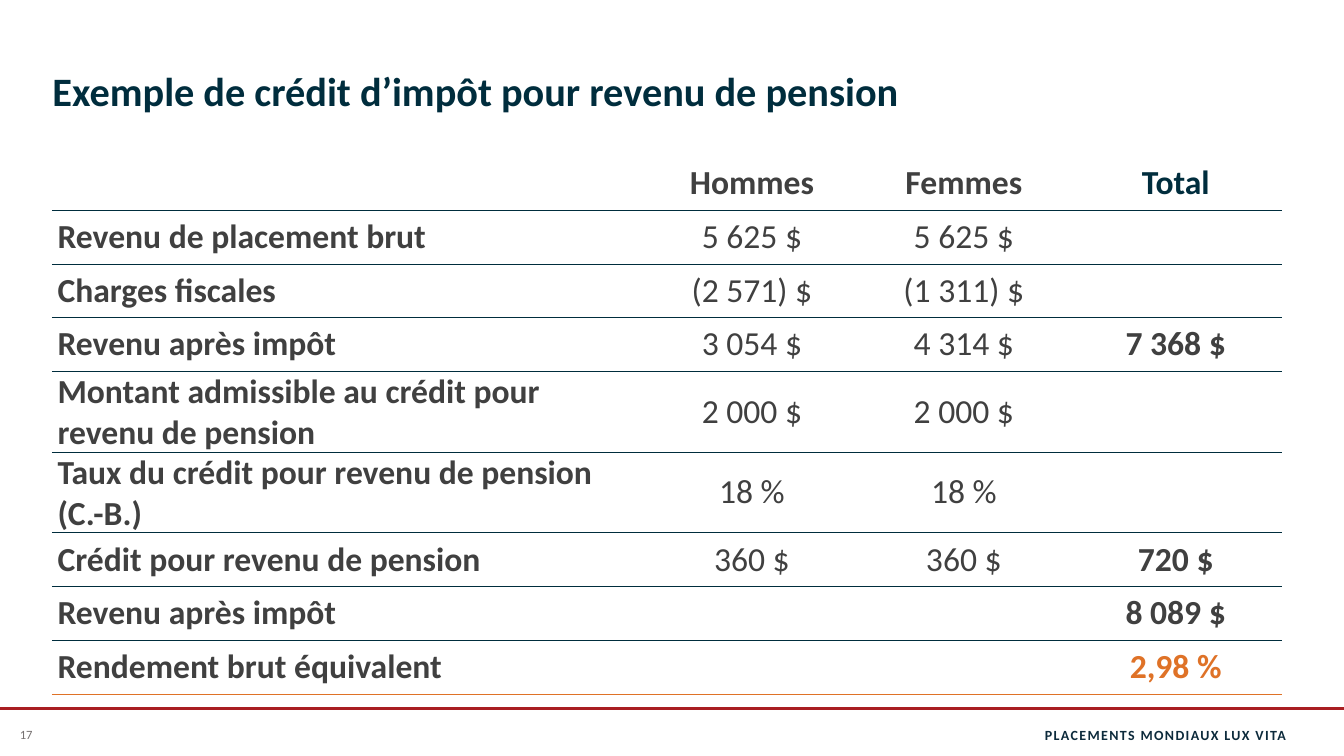
"""Builds the slide showing a pension income tax credit example."""

import dataclasses
import typing

import lxml.etree
import pptx
import pptx.dml.color
import pptx.enum.shapes
import pptx.enum.text
import pptx.oxml.ns
import pptx.slide
import pptx.table
import pptx.text.text
import pptx.util

Cm = pptx.util.Cm
Align = pptx.enum.text.PP_ALIGN
Anchor = pptx.enum.text.MSO_ANCHOR
qn = pptx.oxml.ns.qn


@dataclasses.dataclass(frozen=True)
class Theme:
    font: str = "Calibri"
    navy: str = "002D3D"
    footer_navy: str = "0D2B3C"
    body: str = "404040"
    grey: str = "767171"
    orange: str = "DF7227"
    red: str = "A91E22"
    white: str = "FFFFFF"
    title_size: float = 28.8
    table_size: float = 24
    footer_size: float = 10
    number_size: float = 9


THEME = Theme()


@dataclasses.dataclass(frozen=True)
class Style:
    size: float
    color: str
    bold: bool = False
    align: Align = Align.LEFT
    spacing: int = 0


@dataclasses.dataclass(frozen=True)
class Label:
    text: str
    left: float
    width: float
    side_inset: float
    style: Style


@dataclasses.dataclass(frozen=True)
class Row:
    label: str
    men: str = ""
    women: str = ""
    total: str = ""


@dataclasses.dataclass(frozen=True)
class Border:
    color: str
    width: float


HEADER = Row("", "Hommes", "Femmes", "Total")
ROWS = [
    HEADER,
    Row("Revenu de placement brut", "5 625 $", "5 625 $"),
    Row("Charges fiscales", "(2 571) $", "(1 311) $"),
    Row("Revenu après impôt", "3 054 $", "4 314 $", "7 368 $"),
    Row("Montant admissible au crédit pour revenu de pension", "2 000 $", "2 000 $"),
    Row("Taux du crédit pour revenu de pension (C.-B.)", "18 %", "18 %"),
    Row("Crédit pour revenu de pension", "360 $", "360 $", "720 $"),
    Row("Revenu après impôt", total="8 089 $"),
    Row("Rendement brut équivalent", total="2,98 %"),
]
LAST_ROW = len(ROWS) - 1
TOTAL_COLUMN = 3
COLUMN_WIDTHS = [14.96, 5.34, 5.34, 5.34]
ROW_HEIGHT = 1.355
LEFT = 1.32

LABELS = [
    Label("PLACEMENTS MONDIAUX LUX VITA", 24.56, 7.85, 0,
          Style(THEME.footer_size, THEME.footer_navy, True, Align.RIGHT, 100)),
    Label("17", 0, 1.32, 0.25, Style(THEME.number_size, THEME.grey, align=Align.CENTER)),
]

WHITE_EDGE = Border(THEME.white, 1)
NAVY_RULE = Border(THEME.navy, 0.5)
ORANGE_RULE = Border(THEME.orange, 1)


def format_text(frame: pptx.text.text.TextFrame, style: Style) -> None:
    for paragraph in frame.paragraphs:
        paragraph.alignment = style.align
        for run in paragraph.runs:
            run.font.name = THEME.font
            run.font.size = pptx.util.Pt(style.size)
            run.font.bold = style.bold
            run.font.color.rgb = pptx.dml.color.RGBColor.from_string(style.color)
            if style.spacing:
                run.font._element.set("spc", str(style.spacing))


def set_insets(target: typing.Any, side: float, vertical: float) -> None:
    target.margin_left = target.margin_right = Cm(side)
    target.margin_top = target.margin_bottom = Cm(vertical)


def add_title(slide: pptx.slide.Slide, text: str) -> None:
    title = slide.shapes.title
    title.left, title.top, title.width, title.height = Cm(LEFT), Cm(0), Cm(30.98), Cm(2.9)
    frame = title.text_frame
    frame.text = text
    frame.auto_size = pptx.enum.text.MSO_AUTO_SIZE.NONE
    frame.vertical_anchor = Anchor.BOTTOM
    set_insets(frame, 0, 0)
    format_text(frame, Style(THEME.title_size, THEME.navy, True))


def add_label(slide: pptx.slide.Slide, label: Label) -> None:
    box = slide.shapes.add_textbox(Cm(label.left), Cm(18.01), Cm(label.width), Cm(1.02))
    frame = box.text_frame
    frame.text = label.text
    frame.word_wrap = True
    frame.vertical_anchor = Anchor.MIDDLE
    set_insets(frame, label.side_inset, 0.2)
    format_text(frame, label.style)


def add_footer_rule(slide: pptx.slide.Slide, width: int) -> None:
    height = Cm(17.86)
    rule = slide.shapes.add_connector(
        pptx.enum.shapes.MSO_CONNECTOR.STRAIGHT, 0, height, width, height)
    rule.line.color.rgb = pptx.dml.color.RGBColor.from_string(THEME.red)
    rule.line.width = pptx.util.Pt(2.25)
    lxml.etree.SubElement(rule._element.spPr, qn("a:effectLst"))


def set_borders(cell: pptx.table._Cell, top: Border, bottom: Border) -> None:
    properties = cell._tc.get_or_add_tcPr()
    edges = {"a:lnL": WHITE_EDGE, "a:lnR": WHITE_EDGE, "a:lnT": top, "a:lnB": bottom}
    for tag, border in edges.items():
        line = lxml.etree.SubElement(
            properties, qn(tag), w=str(pptx.util.Pt(border.width)))
        fill = lxml.etree.SubElement(line, qn("a:solidFill"))
        lxml.etree.SubElement(fill, qn("a:srgbClr"), val=border.color)


def cell_style(row: int, column: int) -> Style:
    color = THEME.body
    if column == TOTAL_COLUMN:
        color = {0: THEME.navy, LAST_ROW: THEME.orange}.get(row, THEME.body)
    bold = row == 0 or column in (0, TOTAL_COLUMN)
    align = Align.CENTER if column else Align.LEFT
    return Style(THEME.table_size, color, bold, align)


def add_credit_table(slide: pptx.slide.Slide) -> None:
    frame = slide.shapes.add_table(
        len(ROWS), len(COLUMN_WIDTHS), Cm(LEFT), Cm(3.94),
        Cm(sum(COLUMN_WIDTHS)), Cm(ROW_HEIGHT * len(ROWS)))
    table = frame.table
    table.first_row = table.horz_banding = False
    for column, width in zip(table.columns, COLUMN_WIDTHS):
        column.width = Cm(width)
    for row_index, row in enumerate(ROWS):
        table.rows[row_index].height = Cm(ROW_HEIGHT)
        top = WHITE_EDGE if row_index == 0 else NAVY_RULE
        bottom = ORANGE_RULE if row_index == LAST_ROW else NAVY_RULE
        for column_index, text in enumerate(dataclasses.astuple(row)):
            cell = table.cell(row_index, column_index)
            cell.text_frame.text = text
            cell.vertical_anchor = Anchor.MIDDLE
            if row_index:
                set_insets(cell, 0.13, 0)
            set_borders(cell, top, bottom)
            cell.fill.background()
            format_text(cell.text_frame, cell_style(row_index, column_index))


def main() -> None:
    presentation = pptx.Presentation()
    presentation.slide_width, presentation.slide_height = Cm(33.87), Cm(19.05)
    slide = presentation.slides.add_slide(presentation.slide_layouts.get_by_name("Title Only"))
    add_footer_rule(slide, presentation.slide_width)
    for label in LABELS:
        add_label(slide, label)
    add_credit_table(slide)
    add_title(slide, "Exemple de crédit d’impôt pour revenu de pension")
    presentation.save("out.pptx")


if __name__ == "__main__":
    main()
